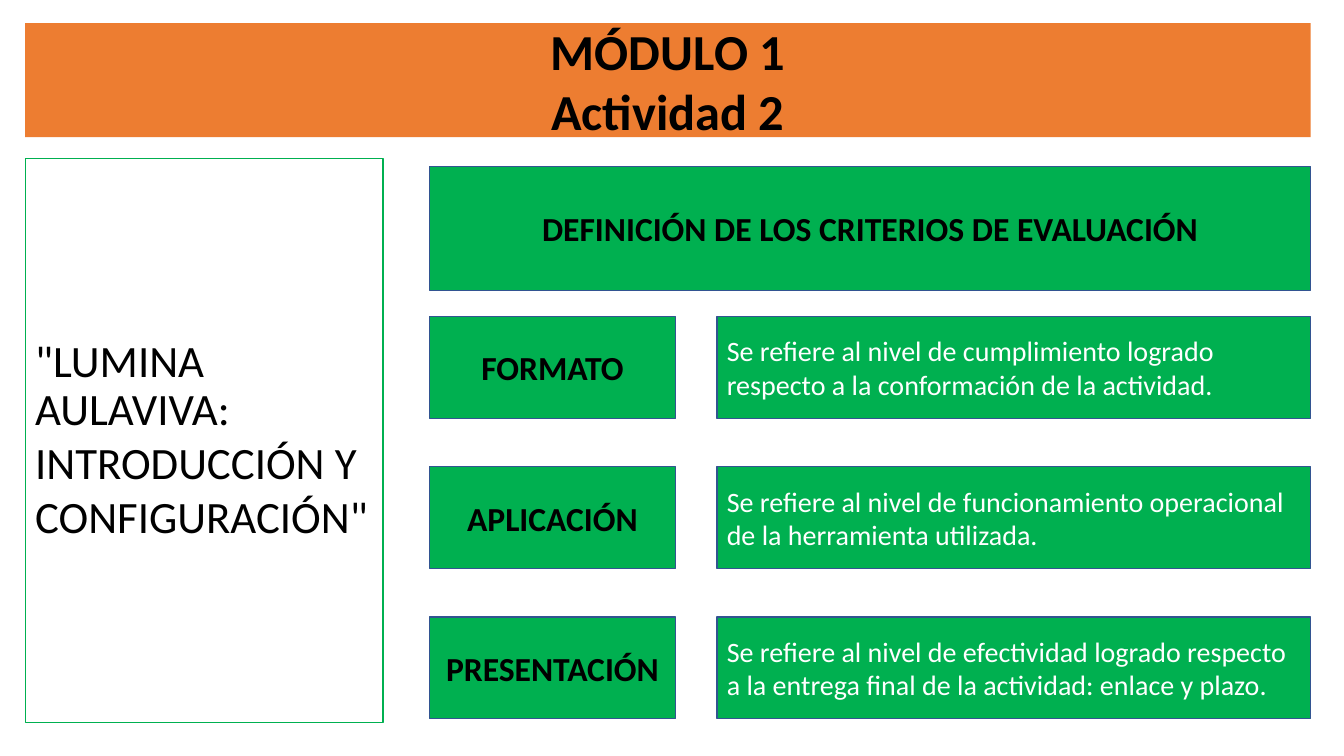
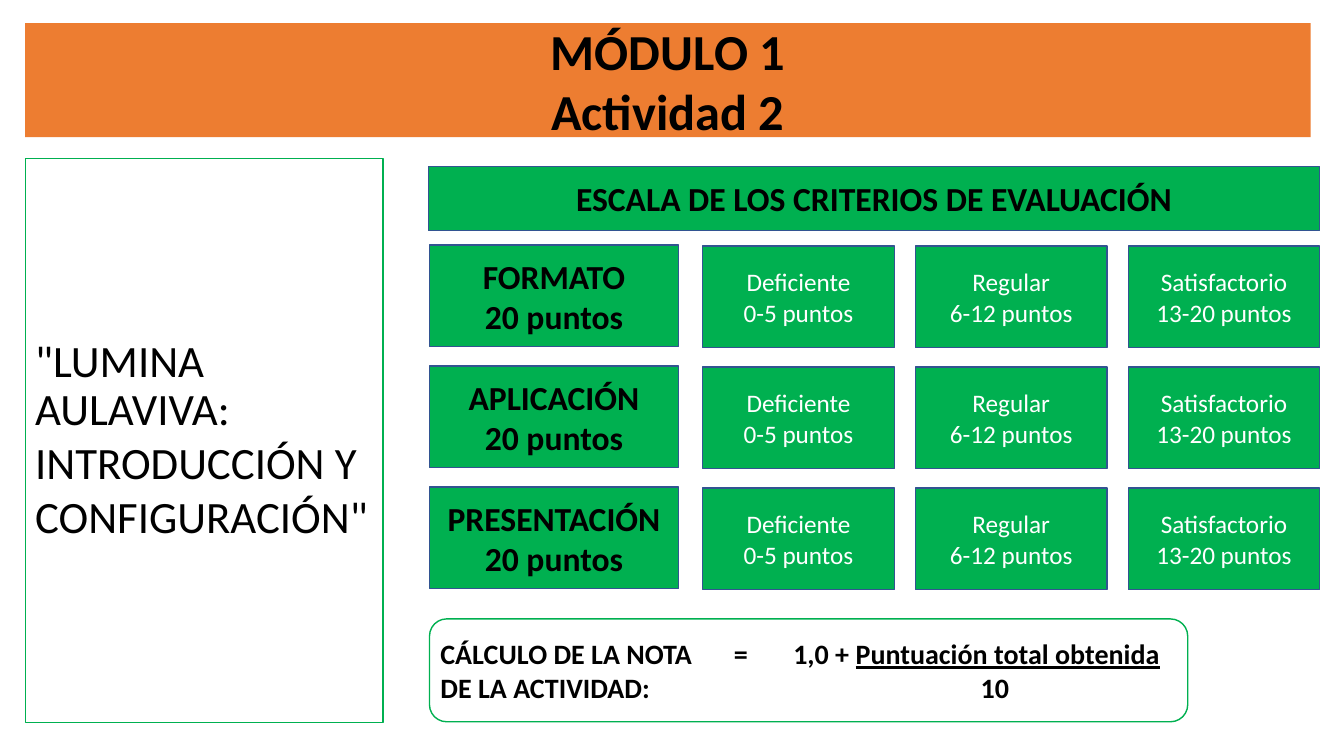
from dataclasses import dataclass

from lxml.etree import SubElement
from pptx import Presentation
from pptx.dml.color import RGBColor
from pptx.enum.shapes import MSO_SHAPE as Shape
from pptx.enum.text import MSO_ANCHOR as Anchor, MSO_AUTO_SIZE as AutoSize, PP_ALIGN as Align
from pptx.oxml.ns import qn
from pptx.util import Inches, Pt


@dataclass(frozen=True)
class Theme:
    font: str = "Calibri"
    orange: RGBColor = RGBColor(0xED, 0x7D, 0x31)
    green: RGBColor = RGBColor(0x00, 0xB0, 0x50)
    outline: RGBColor = RGBColor(0x32, 0x54, 0x91)
    dark: RGBColor = RGBColor(0, 0, 0)
    light: RGBColor = RGBColor(255, 255, 255)
    title: int = 36
    side: int = 32
    heading: int = 24
    body: int = 20
    level: int = 18
    line: int = 1


@dataclass(frozen=True)
class Box:
    left: float
    top: float
    width: float
    height: float

    def place(self):
        return [Inches(v) for v in (self.left, self.top, self.width, self.height)]

    def shifted(self, right=0.0, down=0.0):
        return Box(self.left + right, self.top + down, self.width, self.height)


THEME = Theme()
TITLE_BOX = Box(0.25, 0.23, 12.75, 1.13)
SIDE_BOX = Box(0.25, 1.57, 3.55, 5.6)
TITLE_LINES = ["MÓDULO 1", "Actividad 2"]
SIDE_LINES = ['"LUMINA AULAVIVA:', 'INTRODUCCIÓN Y CONFIGURACIÓN"']

CRITERIA = [
    ("FORMATO", "Se refiere al nivel de cumplimiento logrado respecto a la conformación de la actividad."),
    ("APLICACIÓN", "Se refiere al nivel de funcionamiento operacional de la herramienta utilizada."),
    ("PRESENTACIÓN", "Se refiere al nivel de efectividad logrado respecto a la entrega final "
                     "de la actividad: enlace y plazo."),
]
LEVELS = [
    ("Deficiente", "0-5 puntos"),
    ("Regular", "6-12 puntos"),
    ("Satisfactorio", "13-20 puntos"),
]


# Text
def add_run(paragraph, text, size, color, bold=False, underline=False):
    run = paragraph.add_run()
    run.text = text
    font = run.font
    font.name, font.size, font.bold = THEME.font, Pt(size), bold
    font.underline = underline
    font.color.rgb = color


def write_lines(frame, lines, size, color, bold=False, align=Align.CENTER):
    frame.word_wrap = True
    frame.auto_size = AutoSize.NONE
    frame.vertical_anchor = Anchor.MIDDLE
    for index, line in enumerate(lines):
        paragraph = frame.paragraphs[0] if index == 0 else frame.add_paragraph()
        paragraph.alignment = align
        paragraph.line_spacing = 1.0
        add_run(paragraph, line, size, color, bold)


def add_tab_stop(paragraph, position, align):
    tabs = SubElement(paragraph._p.get_or_add_pPr(), qn("a:tabLst"))
    SubElement(tabs, qn("a:tab"), pos=str(Inches(position)), algn=align)


# Boxes
def add_panel(slide, box, fill=None, line=THEME.green, kind=Shape.RECTANGLE):
    shape = slide.shapes.add_shape(kind, *box.place())
    shape.shadow.inherit = False
    if fill is None:
        shape.fill.background()
    else:
        shape.fill.solid()
        shape.fill.fore_color.rgb = fill
    shape.line.color.rgb = line
    shape.line.width = Pt(THEME.line)
    return shape


def add_card(slide, box, lines, size, color=THEME.light, bold=False, align=Align.CENTER):
    card = add_panel(slide, box, THEME.green, THEME.outline)
    write_lines(card.text_frame, lines, size, color, bold, align)


def add_heading_card(slide, box, lines):
    add_card(slide, box, lines, THEME.heading, THEME.dark, bold=True)


# Title band and side panel shared by the slides
def add_base_slide(presentation):
    slide = presentation.slides.add_slide(presentation.slide_layouts[5])
    title = slide.shapes.title
    title.left, title.top, title.width, title.height = TITLE_BOX.place()
    title.fill.solid()
    title.fill.fore_color.rgb = THEME.orange
    write_lines(title.text_frame, TITLE_LINES, THEME.title, THEME.dark, bold=True)

    side = add_panel(slide, SIDE_BOX)
    write_lines(side.text_frame, SIDE_LINES, THEME.side, THEME.dark, align=Align.LEFT)
    side.text_frame.paragraphs[0].line_spacing = 0.9
    return slide


# Each criterion beside its definition
def add_definitions(slide, box, row_pitch=1.49):
    label = Box(box.left, box.top, 2.44, 1.01)
    text_left = 2.85
    definition = Box(box.left + text_left, box.top, box.width - text_left, label.height)
    for row, (name, meaning) in enumerate(CRITERIA):
        down = row * row_pitch
        add_heading_card(slide, label.shifted(down=down), [name])
        add_card(slide, definition.shifted(down=down), [meaning], THEME.body, align=Align.LEFT)


# Each criterion beside its three levels
def add_scale(slide, box, row_pitch=1.2, level_pitch=2.11):
    label = Box(box.left, box.top, 2.47, 1.01)
    level_box = Box(box.left + 2.71, box.top + 0.01, 1.9, label.height)
    for row, (name, _) in enumerate(CRITERIA):
        down = row * row_pitch
        add_heading_card(slide, label.shifted(down=down), [name, "20 puntos"])
        for column, lines in enumerate(LEVELS):
            add_card(slide, level_box.shifted(column * level_pitch, down), lines, THEME.level)


# Grade formula in a rounded frame
def add_formula(slide, box):
    add_panel(slide, box, kind=Shape.ROUNDED_RECTANGLE)
    label_box = Box(box.left + 0.01, box.top + 0.13, 3, 0.77)
    formula_box = Box(box.left + 2.92, label_box.top, 4.6, label_box.height)
    frames = []
    for part in (label_box, formula_box):
        frame = slide.shapes.add_textbox(*part.place()).text_frame
        frame.word_wrap = True
        frames.append(frame)
    label, formula = frames
    style = dict(size=THEME.body, color=THEME.dark, bold=True)
    add_run(label.paragraphs[0], "CÁLCULO DE LA NOTA DE LA ACTIVIDAD:", **style)

    numerator, denominator = formula.paragraphs[0], formula.add_paragraph()
    add_tab_stop(numerator, 0.59, "l")
    add_run(numerator, "=\t1,0 + ", **style)
    add_run(numerator, "Puntuación total obtenida", underline=True, **style)
    add_tab_stop(denominator, 2.59, "ctr")
    add_run(denominator, "\t10", **style)


def build_definition_slide(presentation):
    slide = add_base_slide(presentation)
    add_heading_card(slide, Box(4.26, 1.65, 8.74, 1.23), ["DEFINICIÓN DE LOS CRITERIOS DE EVALUACIÓN"])
    add_definitions(slide, Box(4.26, 3.14, 8.74, 4))


def build_scale_slide(presentation):
    slide = add_base_slide(presentation)
    add_heading_card(slide, Box(4.25, 1.65, 8.84, 0.64), ["ESCALA DE LOS CRITERIOS DE EVALUACIÓN"])
    add_scale(slide, Box(4.26, 2.43, 8.84, 3.42))
    add_formula(slide, Box(4.26, 6.14, 7.52, 1.02))


def main():
    presentation = Presentation()
    presentation.slide_width, presentation.slide_height = Inches(13.33), Inches(7.5)
    build_definition_slide(presentation)
    build_scale_slide(presentation)
    presentation.save("out.pptx")


if __name__ == "__main__":
    main()
